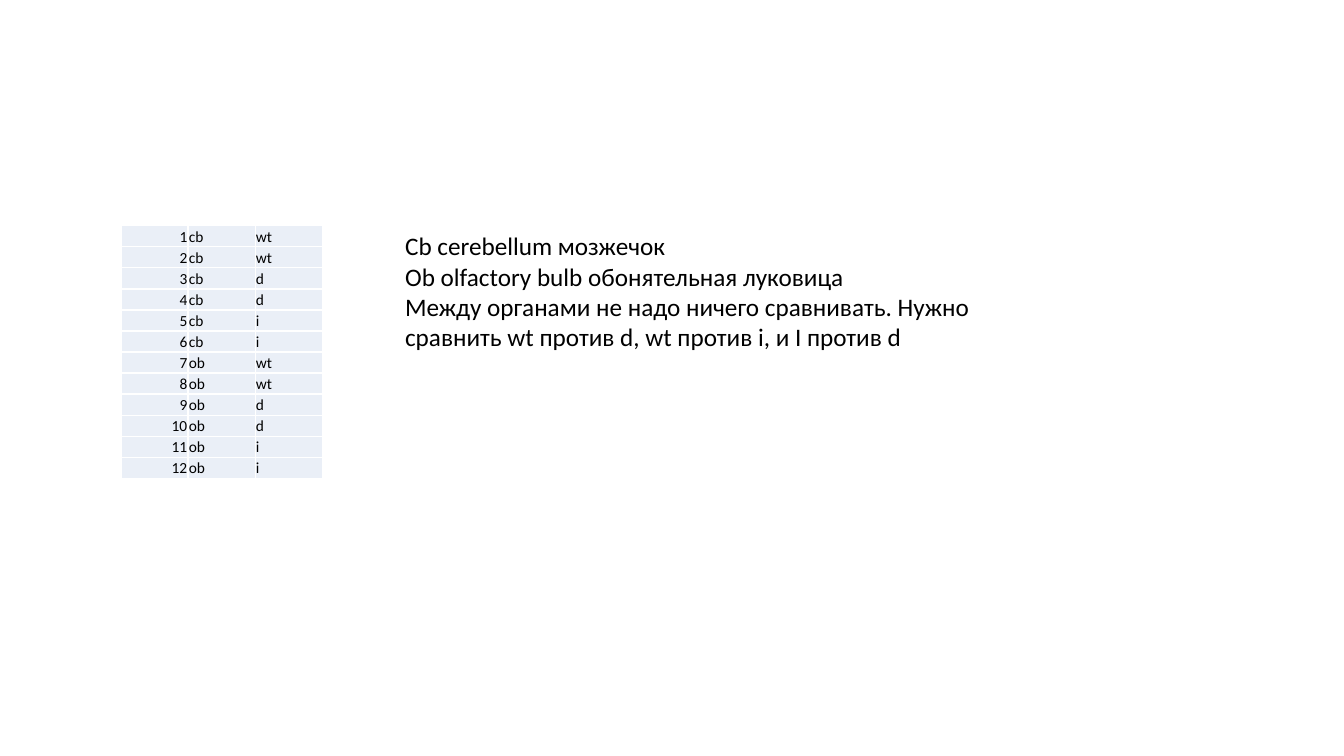
import pptx
import pptx.util
import pptx.dml.color
import pptx.enum.text
import pptx.oxml
import pptx.oxml.ns

Cm = pptx.util.Cm
Pt = pptx.util.Pt
RGB = pptx.dml.color.RGBColor
Align = pptx.enum.text.PP_ALIGN
Anchor = pptx.enum.text.MSO_ANCHOR

BLACK = RGB(0x00, 0x00, 0x00)
WHITE = RGB(0xFF, 0xFF, 0xFF)
PALE = RGB(0xEA, 0xEF, 0xF7)


def write(frame, text, font="Calibri", size=18, color=BLACK, align=Align.LEFT):
    """Fill a text frame, one paragraph per line of text."""
    frame.text = text
    for para in frame.paragraphs:
        para.alignment = align
        para.font.name = font
        para.font.size = Pt(size)
        para.font.color.rgb = color


class Page:
    def __init__(self, deck, font):
        self.slide = deck.slides.add_slide(deck.slide_layouts[6])
        self.font = font

    def note(self, text, left, top, width, height, size):
        box = self.slide.shapes.add_textbox(Cm(left), Cm(top), Cm(width), Cm(height))
        box.text_frame.word_wrap = True
        write(box.text_frame, text, font=self.font, size=size)

    def grid(self, rows, left, top, width, height, size):
        """Draw a table of equal cells with the first column set right."""
        count = len(rows[0])
        frame = self.slide.shapes.add_table(
            len(rows), count, Cm(left), Cm(top),
            Cm(width * count), Cm(height * len(rows)))
        table = frame.table
        table.first_row = False
        table.horz_banding = False
        for col in table.columns:
            col.width = Cm(width)
        for row, values in zip(table.rows, rows):
            row.height = Cm(height)
            for num, (cell, value) in enumerate(zip(row.cells, values)):
                cell.margin_left = cell.margin_right = cell.margin_top = Cm(0.02)
                cell.margin_bottom = 0
                cell.vertical_anchor = Anchor.BOTTOM
                self.edge(cell)
                cell.fill.solid()
                cell.fill.fore_color.rgb = PALE
                write(cell.text_frame, str(value), font=self.font, size=size,
                      align=Align.LEFT if num else Align.RIGHT)

    def edge(self, cell, color=WHITE, width=1):
        """Put a line on all four sides of a cell."""
        props = cell._tc.get_or_add_tcPr()
        for side in "LRTB":
            props.append(pptx.oxml.parse_xml(
                f'<a:ln{side} {pptx.oxml.ns.nsdecls("a")} w="{Pt(width)}">'
                f'<a:solidFill><a:srgbClr val="{color}"/></a:solidFill>'
                f'</a:ln{side}>'))


def main():
    deck = pptx.Presentation()
    deck.slide_width = Cm(33.87)
    deck.slide_height = Cm(19.05)
    page = Page(deck, "Calibri")

    # Samples: two of each group for each organ
    pairs = [(organ, group) for organ in ("cb", "ob")
             for group in ("wt", "d", "i") for _ in range(2)]
    rows = [(num, *pair) for num, pair in enumerate(pairs, 1)]
    page.grid(rows, 3.05, 5.69, 1.69, 0.53, size=11)

    # Key to the organs and the comparisons needed
    page.note("Cb cerebellum мозжечок\n"
              "Ob olfactory bulb обонятельная луковица\n"
              "Между органами не надо ничего сравнивать. Нужно "
              "сравнить wt против d, wt против i, и I против d",
              9.96, 5.69, 16.97, 4.11, size=18)

    deck.save("out.pptx")


if __name__ == "__main__":
    main()
